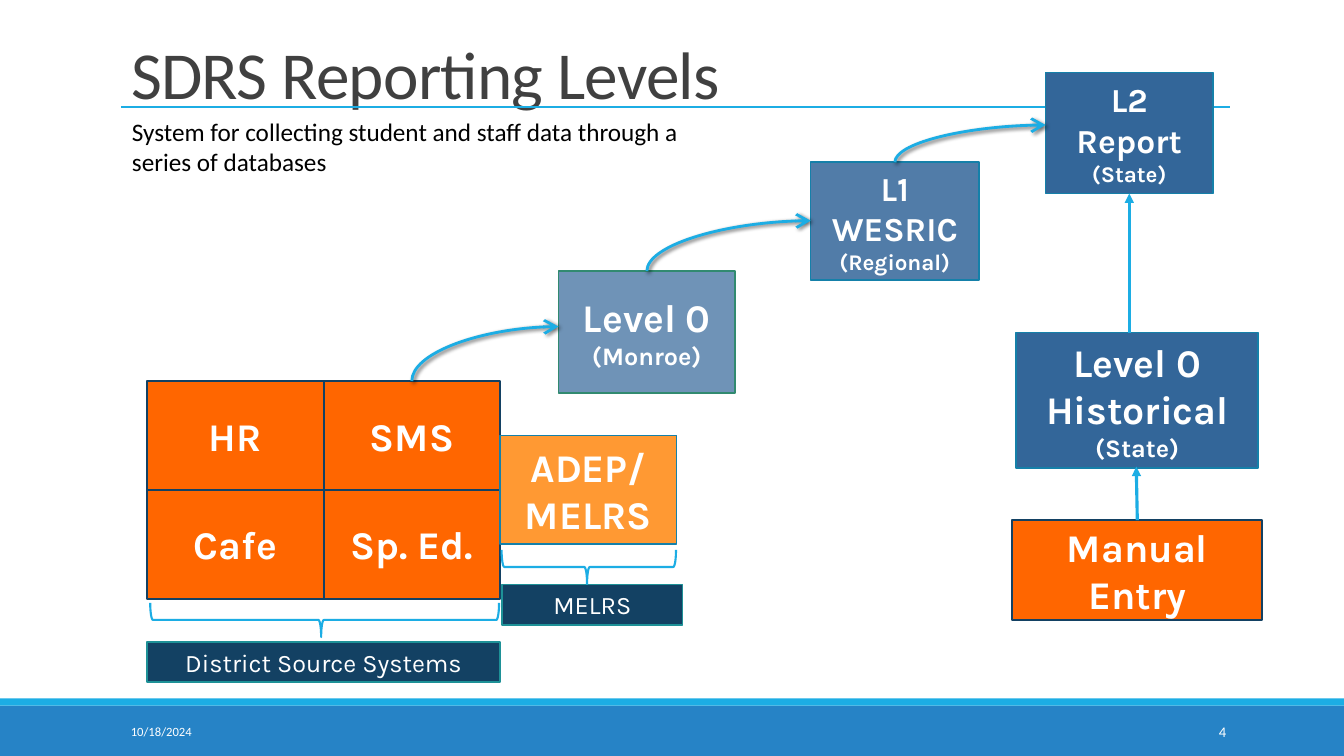
"""Build the SDRS reporting levels slide: source systems feeding a staircase of databases."""
import lxml.etree
import pptx
import pptx.dml.color
import pptx.enum.shapes
import pptx.enum.text
import pptx.oxml
import pptx.oxml.ns
import pptx.util

SHAPE = pptx.enum.shapes.MSO_SHAPE
CONNECTOR = pptx.enum.shapes.MSO_CONNECTOR
ALIGN = pptx.enum.text.PP_ALIGN
ANCHOR = pptx.enum.text.MSO_ANCHOR
SLIDE_SIZE = 13.33, 7.5

THEME = {
    "colors": {
        "footer": "2683C6", "accent": "1CADE4", "title": "404040", "black": "000000",
        "white": "FFFFFF", "source": "FF6600", "adult": "FF9933", "level": "336699",
        "navy": "134163", "edge": "1580A9", "green": "318A70", "teal": "1E9197",
    },
    "sizes": {"title": 48, "big": 28, "medium": 24, "body": 18, "small": 16,
              "number": 10.5, "date": 9},
    "fonts": {"text": "Calibri", "box": "Karla"},
}

TITLE = "SDRS Reporting Levels"
SUBTITLE = "System for collecting student and staff data through a series of databases"
DATE, NUMBER = "10/18/2024", "4"

CELL_WIDTH, CELL_HEIGHT = 1.75, 1.08
GRID_LEFT, GRID_TOP = 1.46, 3.78
SOURCES = [["HR", "SMS"], ["Cafe", "Sp. Ed."]]

BOXES = [
    ("local", (5.54, 2.69, CELL_WIDTH, 1.21), "level", "green", 70,
     [("Level 0", "big"), ("(Monroe)", "body")]),
    ("regional", (8.04, 1.61, 1.67, 1.17), "level", "edge", 85,
     [("L1", "medium"), ("WESRIC", "medium"), ("(Regional)", "small")]),
    ("state", (10.37, 0.72, 1.66, 1.2), "level", "edge", 100,
     [("L2", "medium"), ("Report", "medium"), ("(State)", "small")]),
    ("adult", (GRID_LEFT + 2 * CELL_WIDTH, GRID_TOP + CELL_HEIGHT / 2, CELL_WIDTH, CELL_HEIGHT),
     "adult", "edge", 100, [("ADEP/MELRS", "big")]),
    ("historical", (10.08, 3.3, 2.4, 1.34), "level", "edge", 100,
     [("Level 0 Historical", "big"), ("(State)", "body")]),
    ("manual", (10.04, 5.16, 2.48, 0.99), "source", "navy", 100, [("Manual Entry", "big")]),
]
CAPTIONS = [
    ("District Source Systems", (GRID_LEFT, 6.37, 2 * CELL_WIDTH, 0.4)),
    ("MELRS", (4.98, 5.8, 1.79, 0.4)),
]
BRACES = [(3.05, 4.42, 0.34, 3.46), (5.67, 4.76, 0.34, 1.73)]
STEPS = [("SMS", "local", 3.24), ("local", "regional", 2.19), ("regional", "state", 1.24)]
RISERS = [((11.2, 3.3), (11.2, 1.92)), ((11.28, 5.16), (11.27, 4.63))]


def inches(values):
    return [pptx.util.Inches(value) for value in values]


def color(name):
    return pptx.dml.color.RGBColor.from_string(THEME["colors"][name])


def assign(target, formats):
    for name, value in formats.items():
        setattr(target, name, value)


def write(frame, lines, font, ink, bold=False, align=ALIGN.LEFT, anchor=ANCHOR.MIDDLE):
    assign(frame, {"word_wrap": True, "vertical_anchor": anchor})
    for index, (text, size) in enumerate(lines):
        para = frame.paragraphs[0] if index == 0 else frame.add_paragraph()
        para.alignment = align
        span = para.add_run()
        span.text = text
        assign(span.font, {"name": THEME["fonts"][font], "bold": bold,
                           "size": pptx.util.Pt(THEME["sizes"][size])})
        span.font.color.rgb = color(ink)


def add_box(page, place, fill, edge=None, opacity=100, kind=SHAPE.RECTANGLE):
    box = page.shapes.add_shape(kind, *inches(place))
    box.shadow.inherit = False
    box.fill.solid()
    box.fill.fore_color.rgb = color(fill)
    if opacity < 100:
        solid = box.fill._xPr.find(pptx.oxml.ns.qn("a:solidFill"))
        lxml.etree.SubElement(solid[0], pptx.oxml.ns.qn("a:alpha"), val=str(opacity * 1000))
    if edge:
        box.line.color.rgb = color(edge)
        box.line.width = pptx.util.Pt(1.25)
    else:
        box.line.fill.background()
    return box


def add_text(page, place, text, size, ink, **layout):
    box = page.shapes.add_textbox(*inches(place))
    write(box.text_frame, [(text, size)], "text", ink, **layout)


def add_line(page, start, end, width, head=None, kind=CONNECTOR.STRAIGHT, shadow=""):
    link = page.shapes.add_connector(kind, *inches(start + end))
    link.line.color.rgb = color("accent")
    link.line.width = pptx.util.Pt(width)
    if head:
        lxml.etree.SubElement(link.line._get_or_add_ln(), pptx.oxml.ns.qn("a:tailEnd"), head)
    effects = f'<a:effectLst {pptx.oxml.ns.nsdecls("a")}>{shadow}</a:effectLst>'
    link._element.spPr.append(pptx.oxml.parse_xml(effects))
    return link


def add_step(page, lower, upper, height):
    start = lower.left + lower.width // 2, lower.top
    end = upper.left, pptx.util.Inches(height)
    run, rise = end[0] - start[0], start[1] - end[1]
    shadow = ('<a:outerShdw blurRad="38100" dist="25400" dir="2700000" rotWithShape="0">'
              '<a:srgbClr val="000000"><a:alpha val="60000"/></a:srgbClr></a:outerShdw>')
    head = {"type": "arrow", "w": "lg", "len": "lg"}
    link = add_line(page, (0, 0), (1, 1), 2, head, CONNECTOR.CURVE, shadow)
    assign(link, {"left": (start[0] + end[0] - rise) // 2, "top": (start[1] + end[1] - run) // 2,
                  "width": rise, "height": run})
    props = link._element.spPr
    props.find(pptx.oxml.ns.qn("a:prstGeom")).set("prst", "curvedConnector2")
    for name, value in {"rot": "5400000", "flipH": "1", "flipV": "1"}.items():
        props.find(pptx.oxml.ns.qn("a:xfrm")).set(name, value)


def add_frame(page):
    width, height = SLIDE_SIZE
    add_box(page, (0, 7, width, height - 7), "footer")
    add_box(page, (0, 6.93, width, 0.07), "accent")
    add_line(page, (1.2, 1.06), (12.2, 1.06), 1)
    title = page.shapes.title
    assign(title, dict(zip(("left", "top", "width", "height"), inches((1.2, 0.11, 11, 1.06)))))
    write(title.text_frame, [(TITLE, "title")], "text", "title", anchor=ANCHOR.BOTTOM)
    para = title.text_frame.paragraphs[0]
    para.line_spacing = 0.85
    para.runs[0].font._element.set("spc", "-50")
    add_text(page, (1.2, 7.06, 2.7, 0.4), DATE, "date", "white")
    add_text(page, (10.83, 7.06, 1.43, 0.4), NUMBER, "number", "white", align=ALIGN.RIGHT)
    add_text(page, (1.21, 1.1, 6.08, 0.71), SUBTITLE, "body", "black", anchor=ANCHOR.TOP)


def add_diagram(page):
    grid = [
        (name, (GRID_LEFT + column * CELL_WIDTH, GRID_TOP + row * CELL_HEIGHT,
                CELL_WIDTH, CELL_HEIGHT), "source", "navy", 100, [(name, "big")])
        for row, names in enumerate(SOURCES) for column, name in enumerate(names)
    ]
    boxes = {}
    for name, place, fill, edge, opacity, lines in grid + BOXES:
        boxes[name] = add_box(page, place, fill, edge, opacity, SHAPE.FLOWCHART_PROCESS)
        write(boxes[name].text_frame, lines, "box", "white", True, ALIGN.CENTER)
    for lower, upper, height in STEPS:
        add_step(page, boxes[lower], boxes[upper], height)
    for start, end in RISERS:
        add_line(page, start, end, 2.25, {"type": "triangle"})
    for text, place in CAPTIONS:
        box = add_box(page, place, "navy", "teal")
        write(box.text_frame, [(text, "body")], "box", "white", False, ALIGN.CENTER, ANCHOR.TOP)
    for place in BRACES:
        brace = page.shapes.add_shape(SHAPE.LEFT_BRACE, *inches(place))
        brace.shadow.inherit = False
        brace.rotation = 270
        brace.adjustments[0], brace.adjustments[1] = 0.08, 0.49
        brace.fill.background()
        brace.line.color.rgb = color("accent")
        brace.line.width = pptx.util.Pt(1.5)


def main():
    deck = pptx.Presentation()
    deck.slide_width, deck.slide_height = inches(SLIDE_SIZE)
    page = deck.slides.add_slide(deck.slide_layouts.get_by_name("Title Only"))
    add_frame(page)
    add_diagram(page)
    deck.save("out.pptx")


if __name__ == "__main__":
    main()
